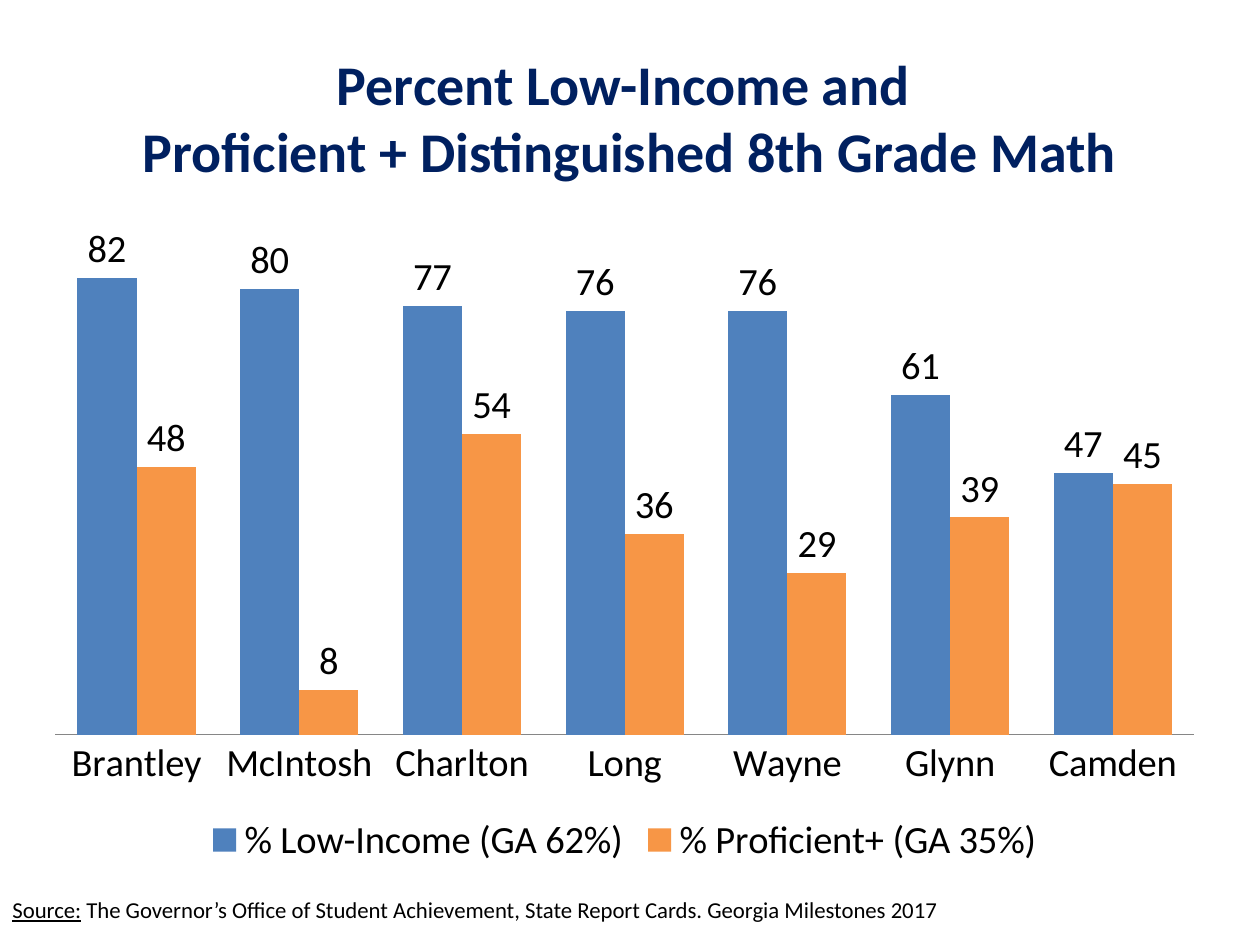
from pptx import Presentation
from pptx.chart.data import CategoryChartData
from pptx.dml.color import RGBColor
from pptx.enum.chart import XL_CHART_TYPE as ChartType, XL_LABEL_POSITION as LabelPos
from pptx.enum.chart import XL_LEGEND_POSITION as LegendPos, XL_TICK_MARK as TickMark
from pptx.enum.text import MSO_ANCHOR as Anchor, PP_ALIGN as Align
from pptx.oxml import parse_xml
from pptx.oxml.ns import nsdecls
from pptx.util import Pt

NAVY = RGBColor(0x00, 0x20, 0x60)
BLACK = RGBColor(0x00, 0x00, 0x00)
GRAY = RGBColor(0x86, 0x86, 0x86)
BLUE = RGBColor(0x4F, 0x81, 0xBD)
ORANGE = RGBColor(0xF7, 0x96, 0x46)
FONT = "Calibri"


def add_text(paragraph, text, size, color=BLACK, bold=False, underline=False):
    """Append text to a paragraph; a newline becomes a line break."""
    for i, line in enumerate(text.split("\n")):
        if i:
            paragraph.add_line_break()
        run = paragraph.add_run()
        run.text = line
        font = run.font
        font.name, font.size, font.bold, font.underline = FONT, Pt(size), bold, underline
        font.color.rgb = color


prs = Presentation()
prs.slide_width, prs.slide_height = Pt(720), Pt(540)
slide = prs.slides.add_slide(prs.slide_layouts[5])

# Title
title = slide.shapes.title
title.left, title.top, title.width, title.height = Pt(36), Pt(21.6), Pt(648), Pt(90)
title.text_frame.vertical_anchor = Anchor.MIDDLE
heading = title.text_frame.paragraphs[0]
heading.alignment = Align.CENTER
add_text(heading, "Percent Low-Income and \nProficient + Distinguished 8th Grade Math",
         size=32, color=NAVY, bold=True)

# Source line
source = slide.shapes.add_textbox(Pt(0), Pt(514), Pt(630), Pt(18)).text_frame
source.word_wrap = True
citation = source.paragraphs[0]
citation.line_spacing = 0.6
add_text(citation, "Source:", size=13, underline=True)
add_text(citation, " The Governor’s Office of Student Achievement, State Report Cards. "
         "Georgia Milestones 2017", size=13)

# Chart data
counties = CategoryChartData(number_format="0")
counties.categories = ["Brantley", "McIntosh", "Charlton", "Long", "Wayne", "Glynn", "Camden"]
counties.add_series("% Low-Income (GA 62%)", [82, 80, 77, 76, 76, 61, 47])
counties.add_series("% Proficient+ (GA 35%)", [48, 8, 54, 36, 29, 39, 45])

chart = slide.shapes.add_chart(ChartType.CLUSTERED if hasattr(ChartType, "CLUSTERED")
                               else ChartType.COLUMN_CLUSTERED,
                               Pt(18), Pt(126), Pt(678), Pt(372), counties).chart
chart.has_title = False
chart.font.name, chart.font.size = FONT, Pt(22)
chart.font.color.rgb = BLACK

# Legend
chart.has_legend = True
chart.legend.position = LegendPos.BOTTOM
chart.legend.include_in_layout = False

# Axes
county_axis = chart.category_axis
county_axis.major_tick_mark = TickMark.NONE
county_axis.format.line.color.rgb = GRAY
percent_axis = chart.value_axis
percent_axis.visible = False
percent_axis.has_major_gridlines = False
percent_axis.minimum_scale, percent_axis.maximum_scale = 0, 90

# Columns and value labels
columns = chart.plots[0]
columns.gap_width, columns.overlap = 75, 0
columns.vary_by_categories = False
for series, color in zip(columns.series, (BLUE, ORANGE)):
    series.format.fill.solid()
    series.format.fill.fore_color.rgb = color
    labels = series.data_labels
    labels.show_value = True
    labels.position = LabelPos.OUTSIDE_END
    labels.number_format, labels.number_format_is_linked = "0", False

# Plot area as fractions of the chart
bounds = {"x": 0.02, "y": 0.02, "w": 0.96, "h": 0.77}
plot_area = chart._chartSpace.chart.plotArea
for old_layout in plot_area.findall("{*}layout"):
    plot_area.remove(old_layout)
plot_area.insert(0, parse_xml(
    f'<c:layout {nsdecls("c")}><c:manualLayout><c:layoutTarget val="inner"/>'
    '<c:xMode val="edge"/><c:yMode val="edge"/>'
    + "".join(f'<c:{side} val="{share}"/>' for side, share in bounds.items())
    + "</c:manualLayout></c:layout>"))

prs.save("out.pptx")
